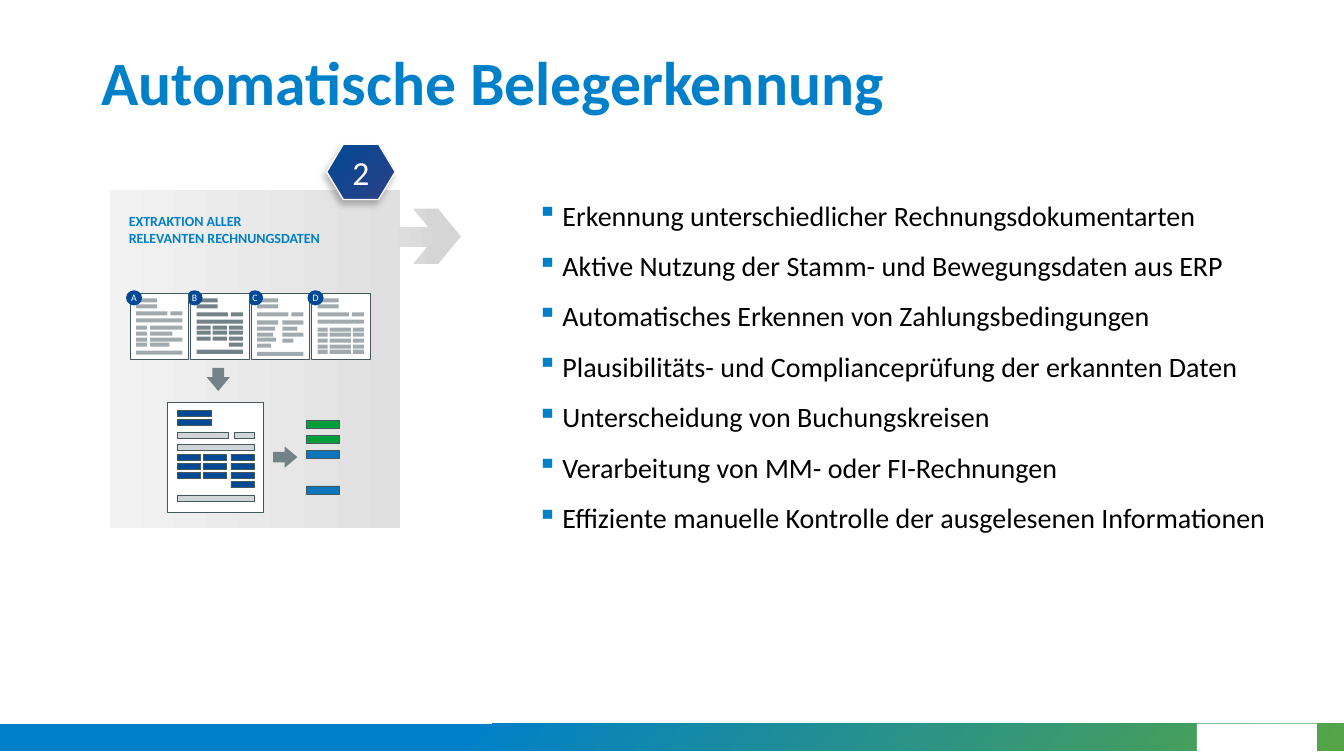
from dataclasses import dataclass

from lxml import etree
from pptx import Presentation
from pptx.dml.color import RGBColor
from pptx.enum.shapes import MSO_SHAPE
from pptx.enum.text import MSO_ANCHOR, PP_ALIGN
from pptx.oxml.ns import qn
from pptx.util import Pt

RECT, OVAL = MSO_SHAPE.RECTANGLE, MSO_SHAPE.OVAL
CHEVRON, HEXAGON, ARROW = MSO_SHAPE.CHEVRON, MSO_SHAPE.HEXAGON, MSO_SHAPE.RIGHT_ARROW
TOP, MIDDLE, BOTTOM = MSO_ANCHOR.TOP, MSO_ANCHOR.MIDDLE, MSO_ANCHOR.BOTTOM
LEFT, CENTER = PP_ALIGN.LEFT, PP_ALIGN.CENTER
PX = 9144  # 100 px to the inch


@dataclass(frozen=True)
class Theme:
    font: str = "Calibri"
    blue: str = "0080C8"
    green: str = "55A546"
    navy: str = "004994"
    indigo: str = "2C4187"
    white: str = "FFFFFF"
    black: str = "000000"
    outline: str = "44585E"
    dark_bar: str = "728286"
    light_bar: str = "A1ABAF"
    field: str = "D0D5D7"
    match: str = "059E3C"
    result: str = "0C75BB"
    panel_dark: str = "E0E0E0"
    panel_light: str = "F2F2F2"
    flow_dark: str = "D5D5D5"
    flow_light: str = "D9D9D9"
    title: int = 44
    body: int = 20
    number: int = 24
    caption: int = 10
    badge: int = 7


T = Theme()

BULLETS = [
    "Erkennung unterschiedlicher Rechnungsdokumentarten",
    "Aktive Nutzung der Stamm- und Bewegungsdaten aus ERP",
    "Automatisches Erkennen von Zahlungsbedingungen",
    "Plausibilitäts- und Complianceprüfung der erkannten Daten",
    "Unterscheidung von Buchungskreisen",
    "Verarbeitung von MM- oder FI-Rechnungen",
    "Effiziente manuelle Kontrolle der ausgelesenen Informationen",
]

# Bars of a small document: (offset from its left edge, width), keyed by top
HEAD, SPLIT, FULL = [(6, 21)], [(6, 31), (40, 12)], [(6, 46)]
THIRDS = [(6, 14), (22, 14), (38, 14)]
TABLE = [(6, 10), (18, 21), (41, 11)]
BARS_A = {309: SPLIT, 316: FULL, 323: [(6, 11), (20, 32)], 329: [(6, 11), (20, 22)],
          335: [(6, 11), (20, 32)], 340: [(6, 11), (20, 19)], 348: FULL}
BARS_B = {310: SPLIT, 317: FULL, 323: THIRDS, 328: THIRDS, 334: THIRDS,
          340: THIRDS[2:], 347: FULL}
BARS_C = {310: SPLIT, 318: [(6, 21), (31, 21)], 324: [(6, 18), (31, 15)],
          330: [(6, 16), (31, 21)], 335: [(6, 19)], 336: [(31, 11)],
          341: [(6, 14)], 349: FULL}
BARS_D = {310: SPLIT, 317: FULL, **dict.fromkeys((325, 330, 336, 342, 347), TABLE)}

# Fields of the large form: (left, width), keyed by top
FORM_COLUMNS = [(176, 23), (202, 23), (229, 23)]
FORM_NAVY = {407: [(176, 34)], 416: [(176, 34)], 451: FORM_COLUMNS,
             460: FORM_COLUMNS, 469: FORM_COLUMNS, 478: FORM_COLUMNS[2:]}
FORM_GREY = {429: [(176, 51), (232, 20)], 441: [(176, 76)], 491: [(176, 76)]}


def rgb(color):
    return RGBColor.from_string(color)


def emu(lengths):
    return [n * PX for n in lengths]


def shape(shapes, kind, at, fill, line=None, width=0.5, adj=()):
    sp = shapes.add_shape(kind, *emu(at))
    sp.shadow.inherit = False
    sp.fill.solid()
    sp.fill.fore_color.rgb = rgb(fill)
    if line:
        sp.line.color.rgb = rgb(line)
        sp.line.width = Pt(width)
    else:
        sp.line.fill.background()
    for i, value in enumerate(adj):
        sp.adjustments[i] = value
    return sp


def gradient(sp, stops, angle):
    sp.fill.gradient()
    sp.fill.gradient_angle = -angle % 360
    for stop, (position, color) in zip(sp.fill.gradient_stops, stops):
        stop.position = position / 100
        stop.color.rgb = rgb(color)


def drop_shadow(sp):
    effects = sp._element.spPr.find(qn("a:effectLst"))
    outer = etree.SubElement(effects, qn("a:outerShdw"), blurRad=str(Pt(5)),
                             dist=str(Pt(4)), dir=str(120 * 60000), rotWithShape="0")
    color = etree.SubElement(outer, qn("a:srgbClr"), val=T.black)
    etree.SubElement(color, qn("a:alpha"), val="25000")


def bullet(p):
    p.line_spacing = 1.5
    pPr = p._p.get_or_add_pPr()
    pPr.set("marL", str(25 * PX))
    pPr.set("indent", str(-25 * PX))
    color = etree.SubElement(pPr, qn("a:buClr"))
    etree.SubElement(color, qn("a:srgbClr"), val=T.blue)
    etree.SubElement(pPr, qn("a:buChar"), char="▪")


def write(sp, lines, size, color, bold=False, align=LEFT, anchor=TOP, bullets=False):
    tf = sp.text_frame
    tf.word_wrap = True
    tf.vertical_anchor = anchor
    for i, line in enumerate(lines):
        p = tf.paragraphs[0] if i == 0 else tf.add_paragraph()
        p.alignment = align
        if bullets:
            bullet(p)
        r = p.add_run()
        r.text = line
        r.font.name, r.font.size, r.font.bold = T.font, Pt(size), bold
        r.font.color.rgb = rgb(color)


def text_box(shapes, at, lines, size, color, **style):
    write(shapes.add_textbox(*emu(at)), lines, size, color, **style)


def bars(shapes, rows, left, height, fill, line=None):
    for top, cells in rows.items():
        for x, width in cells:
            shape(shapes, RECT, (left + x, top, width, height), fill, line)


def document(slide, column, letter, rows, fill):
    left = 129 + 60 * column
    group = slide.shapes.add_group_shape().shapes
    shape(group, RECT, (left, 291, 58, 66), T.white, T.outline)
    bars(group, {296: HEAD, 302: HEAD, **rows}, left, 4, fill)
    badge = shape(group, OVAL, (left - 4, 288, 16, 15), T.navy)
    write(badge, [letter], T.badge, T.white, align=CENTER, anchor=MIDDLE)
    tf = badge.text_frame
    tf.word_wrap = False
    tf.margin_left = tf.margin_right = tf.margin_top = tf.margin_bottom = 0


def panel(slide):
    group = slide.shapes.add_group_shape().shapes
    shape(group, RECT, (391, 223, 36, 24), T.flow_light, T.white, 3)
    back = shape(group, RECT, (107, 186, 292, 340), T.white, T.white, 3)
    gradient(back, [(0, T.panel_dark), (100, T.panel_light)], 180)
    head = shape(group, CHEVRON, (405, 205, 55, 59), T.white, T.white, 3, [0.441])
    gradient(head, [(36, T.flow_dark), (100, T.flow_light)], 180)
    shaft = shape(group, RECT, (383, 225, 59, 20), T.white)
    gradient(shaft, [(3, T.flow_dark), (100, T.panel_dark)], 180)


def extraction(slide):
    group = slide.shapes.add_group_shape().shapes
    shape(group, RECT, (166, 399, 95, 109), T.white, T.outline)
    bars(group, FORM_NAVY, 0, 6, T.navy, T.outline)
    bars(group, FORM_GREY, 0, 6, T.field, T.outline)
    shape(group, ARROW, (271, 443, 24, 21), T.dark_bar, adj=(0.5, 0.6))
    for top, fill in ((417, T.match), (432, T.match), (447, T.result), (482, T.result)):
        shape(group, RECT, (304, top, 33, 8), fill, T.outline)


def main():
    prs = Presentation()
    prs.slide_width, prs.slide_height = emu((1333, 750))
    s = prs.slides.add_slide(prs.slide_layouts[6])

    # Footer band
    band = shape(s.shapes, RECT, (0, 718, 1333, 27), T.blue)
    gradient(band, [(35, T.blue), (100, T.green)], 40)
    shape(s.shapes, RECT, (1187, 718, 119, 27), T.white)

    # Title and bullet list
    text_box(s.shapes, (91, 0, 872, 122), ["Automatische Belegerkennung"],
             T.title, T.blue, bold=True, anchor=BOTTOM)
    text_box(s.shapes, (523, 175, 752, 533), BULLETS, T.body, T.black, bullets=True)

    # Extraction diagram
    panel(s)
    text_box(s.shapes, (118, 206, 247, 44),
             ["EXTRAKTION ALLER", "RELEVANTEN RECHNUNGSDATEN"],
             T.caption, T.blue, bold=True)
    down = shape(s.shapes, ARROW, (205, 365, 23, 23), T.dark_bar, adj=(0.5, 0.6))
    down.rotation = 90
    extraction(s)

    # Each document covers the edge of the badge to its right
    document(s, 2, "C", BARS_C, T.light_bar)
    document(s, 1, "B", BARS_B, T.dark_bar)
    document(s, 0, "A", BARS_A, T.light_bar)
    document(s, 3, "D", BARS_D, T.light_bar)

    # Step number
    step = shape(s.shapes, HEXAGON, (324, 143, 68, 55), T.navy, T.white, 1, [0.3])
    gradient(step, [(0, T.navy), (100, T.indigo)], 45)
    drop_shadow(step)
    text_box(s.shapes, (324, 146, 68, 50), ["2"], T.number, T.white, align=CENTER)

    prs.save("out.pptx")


if __name__ == "__main__":
    main()
